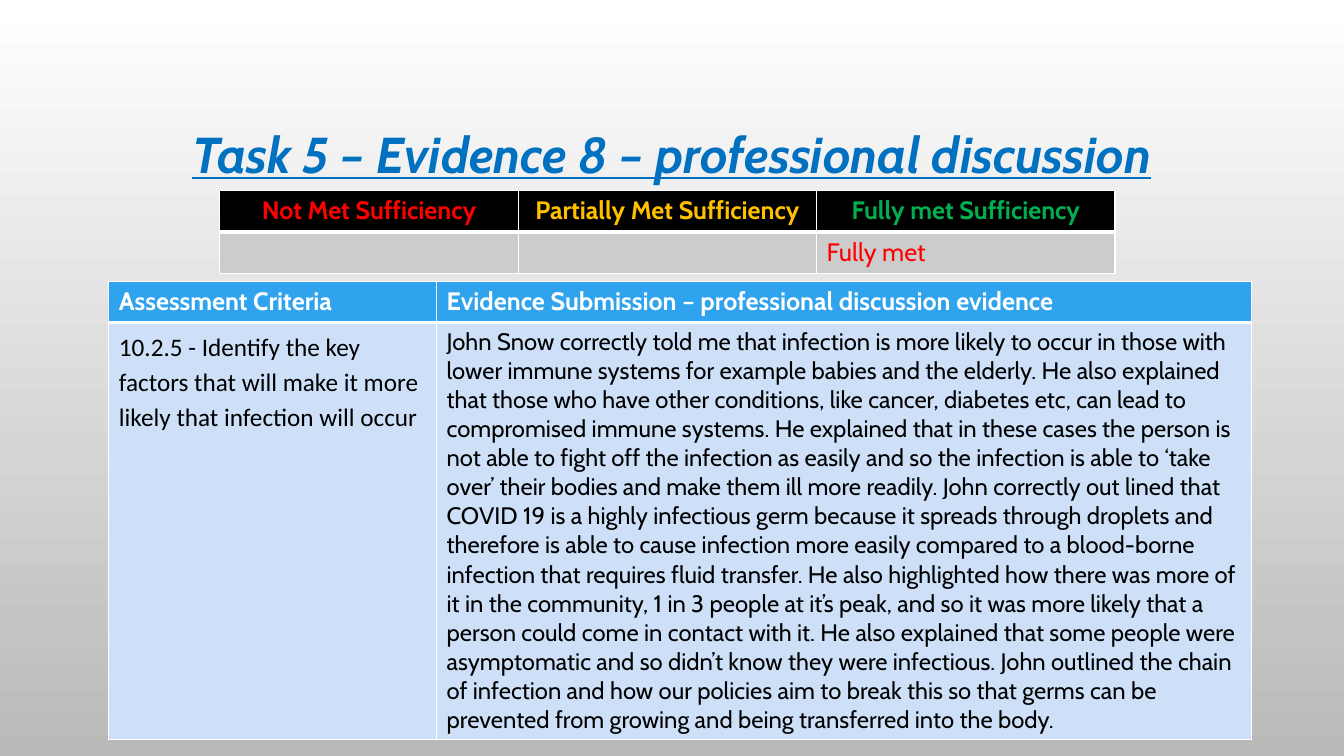
from lxml.etree import SubElement
from pptx import Presentation
from pptx.dml.color import RGBColor
from pptx.enum.text import MSO_ANCHOR, PP_ALIGN
from pptx.oxml.ns import qn
from pptx.util import Inches, Pt

BLACK = RGBColor(0x00, 0x00, 0x00)
WHITE = RGBColor(0xFF, 0xFF, 0xFF)
BACKDROP_GREY = RGBColor(0xB9, 0xB9, 0xB9)
TITLE_BLUE = RGBColor(0x00, 0x70, 0xC0)
RED = RGBColor(0xFF, 0x00, 0x00)
AMBER = RGBColor(0xFF, 0xC0, 0x00)
GREEN = RGBColor(0x00, 0xB0, 0x50)
CELL_GREY = RGBColor(0xCC, 0xCC, 0xCC)
HEADER_BLUE = RGBColor(0x2F, 0xA3, 0xEE)
CELL_BLUE = RGBColor(0xCD, 0xE0, 0xF8)

TITLE = "Task 5 – Evidence 8 – professional discussion"
CRITERION = (
    "10.2.5 - Identify the key factors that will make it more likely "
    "that infection will occur"
)
DISCUSSION_SENTENCES = [
    "John Snow correctly told me that infection is more likely to occur in those "
    "with lower immune systems for example babies and the elderly.",
    "He also explained that those who have other conditions, like cancer, diabetes "
    "etc, can lead to compromised immune systems.",
    "He explained that in these cases the person is not able to fight off the "
    "infection as easily and so the infection is able to ‘take over’ their bodies "
    "and make them ill more readily.",
    "John correctly out lined that COVID 19 is a highly infectious germ because it "
    "spreads through droplets and therefore is able to cause infection more easily "
    "compared to a blood-borne infection that requires fluid transfer.",
    "He also highlighted how there was more of it in the community, 1 in 3 people at "
    "it’s peak, and so it was more likely that a person could come in contact with it.",
    "He also explained that some people were asymptomatic and so didn’t know they "
    "were infectious.",
    "John outlined the chain of infection and how our policies aim to break this so "
    "that germs can be prevented from growing and being transferred into the body.",
]

CENTERED = {"alignment": PP_ALIGN.CENTER}
TITLE_FONT = {"name": "Cabin", "size": Pt(36), "bold": True, "italic": True, "underline": True}
HEADING = {"name": "Cabin", "size": Pt(18), "bold": True}
BODY = {"name": "Cabin", "size": Pt(18), "bold": False}
DISCUSSION_FONT = {**BODY, "size": Pt(17)}
CRITERION_FONT = {**BODY, "name": "Calibri"}
CRITERION_SPACING = {"line_spacing": 1.15, "space_after": Pt(10)}

SUFFICIENCY = {
    "place": (2.18, 1.89),
    "columns": [2.96] * 3,
    "rows": [0.41, 0.41],
    "fills": [BLACK, CELL_GREY],
    "cells": [
        [
            ("Not Met Sufficiency", RED, HEADING, CENTERED),
            ("Partially Met Sufficiency", AMBER, HEADING, CENTERED),
            ("Fully met Sufficiency", GREEN, HEADING, CENTERED),
        ],
        [
            ("", RED, BODY, {}),
            ("", RED, BODY, {}),
            ("Fully met", RED, BODY, {}),
        ],
    ],
}
EVIDENCE = {
    "place": (1.08, 2.79),
    "columns": [3.25, 8.08],
    "rows": [0.41, 4.14],
    "fills": [HEADER_BLUE, CELL_BLUE],
    "cells": [
        [
            ("Assessment Criteria", WHITE, HEADING, {}),
            ("Evidence Submission – professional discussion evidence", WHITE, HEADING, {}),
        ],
        [
            (CRITERION, BLACK, CRITERION_FONT, CRITERION_SPACING),
            (" ".join(DISCUSSION_SENTENCES), BLACK, DISCUSSION_FONT, {}),
        ],
    ],
}


def apply(target, values):
    for key, value in values.items():
        setattr(target, key, value)


def write(paragraph, text, color, font, layout):
    apply(paragraph, layout)
    if text:
        run = paragraph.add_run()
        run.text = text
        apply(run.font, font)
        run.font.color.rgb = color


def add_borders(cell, widths):
    properties = cell._tc.get_or_add_tcPr()
    for side, width in widths.items():
        line = SubElement(properties, qn(f"a:ln{side}"), w=str(Pt(width)))
        paint = SubElement(line, qn("a:solidFill"))
        SubElement(paint, qn("a:srgbClr"), val=str(WHITE))


def add_grid(slide, content):
    widths, heights = content["columns"], content["rows"]
    left, top = content["place"]
    grid = slide.shapes.add_table(
        len(heights), len(widths),
        Inches(left), Inches(top), Inches(sum(widths)), Inches(sum(heights)),
    ).table
    for column, width in zip(grid.columns, widths):
        column.width = Inches(width)
    for r, (height, fill, entries) in enumerate(zip(heights, content["fills"], content["cells"])):
        grid.rows[r].height = Inches(height)
        borders = {"L": 1, "R": 1, "T": 3 if r else 1, "B": 1 if r else 3}
        for c, entry in enumerate(entries):
            cell = grid.cell(r, c)
            add_borders(cell, borders)
            cell.fill.solid()
            cell.fill.fore_color.rgb = fill
            write(cell.text_frame.paragraphs[0], *entry)


def main():
    deck = Presentation()
    deck.slide_width, deck.slide_height = Inches(13.33), Inches(7.5)
    slide = deck.slides.add_slide(deck.slide_layouts[6])

    backdrop = slide.background.fill
    backdrop.gradient()
    backdrop.gradient_angle = 270
    for stop, position, color in zip(backdrop.gradient_stops, (0, 1), (WHITE, BACKDROP_GREY)):
        stop.position = position
        stop.color.rgb = color

    title = slide.shapes.add_textbox(Inches(1), Inches(0.68), Inches(11.33), Inches(1.75)).text_frame
    apply(title, {"word_wrap": True, "vertical_anchor": MSO_ANCHOR.MIDDLE})
    write(title.paragraphs[0], TITLE, TITLE_BLUE, TITLE_FONT, {**CENTERED, "line_spacing": 0.9})

    for content in (SUFFICIENCY, EVIDENCE):
        add_grid(slide, content)

    deck.save("out.pptx")


if __name__ == "__main__":
    main()
